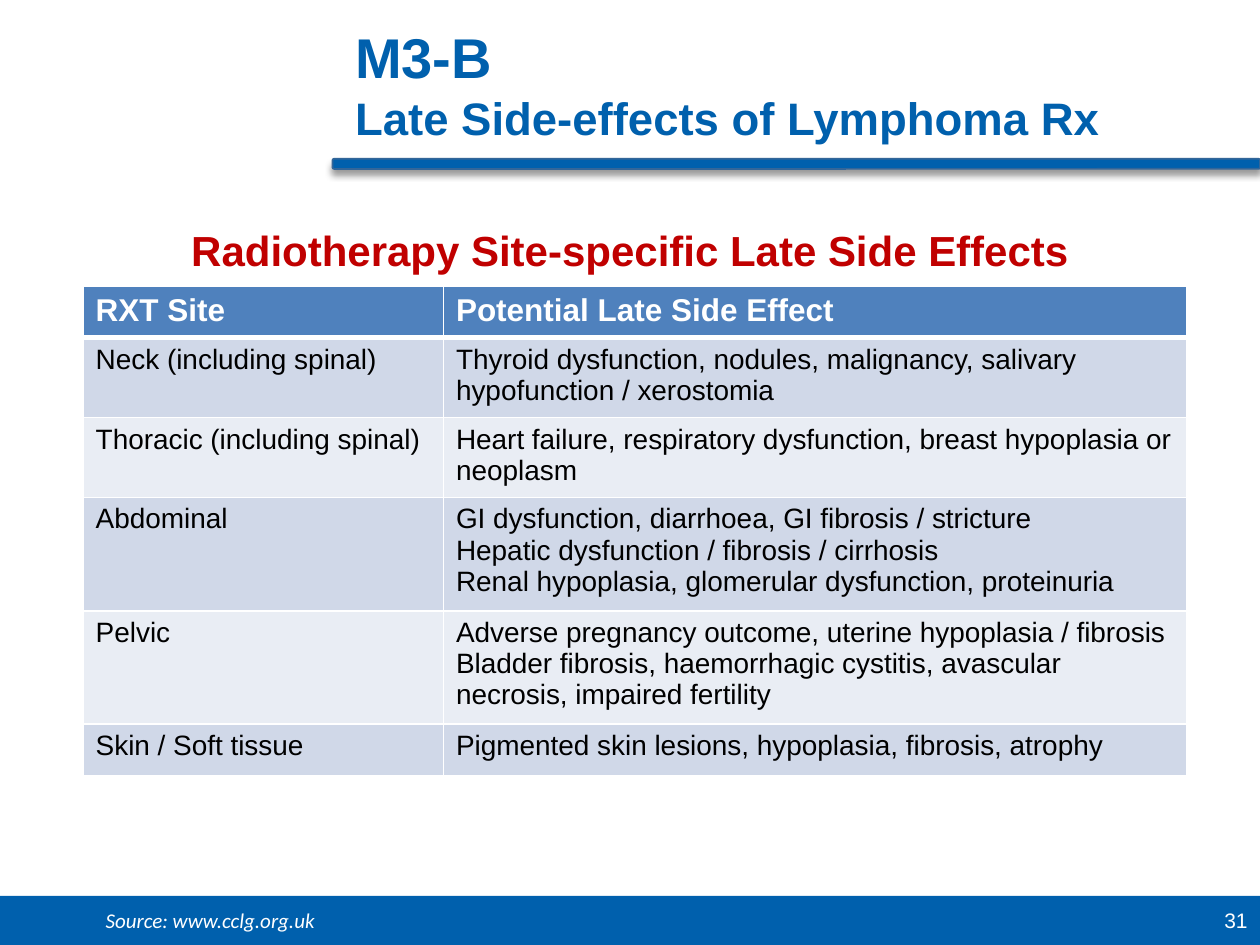
from lxml.etree import SubElement
from pptx import Presentation
from pptx.dml.color import RGBColor
from pptx.enum.shapes import MSO_SHAPE
from pptx.enum.text import MSO_ANCHOR, PP_ALIGN
from pptx.oxml import parse_xml
from pptx.oxml.ns import nsdecls, qn
from pptx.util import Pt

COLORS = {"blue": "0060AD", "edge": "336699", "red": "C00000", "white": "FFFFFF", "black": "000000",
          "header": "4F81BD", "odd": "D0D8E8", "even": "E9EDF4"}
SITE_EFFECTS = [
    ("RXT Site", "Potential Late Side Effect"),
    ("Neck (including spinal)",
     "Thyroid dysfunction, nodules, malignancy, salivary hypofunction / xerostomia"),
    ("Thoracic (including spinal)",
     "Heart failure, respiratory dysfunction, breast hypoplasia or neoplasm"),
    ("Abdominal",
     "GI dysfunction, diarrhoea, GI fibrosis / stricture\n"
     "Hepatic dysfunction / fibrosis / cirrhosis\n"
     "Renal hypoplasia, glomerular dysfunction, proteinuria"),
    ("Pelvic",
     "Adverse pregnancy outcome, uterine hypoplasia / fibrosis\n"
     "Bladder fibrosis, haemorrhagic cystitis, avascular necrosis, impaired fertility"),
    ("Skin / Soft tissue", "Pigmented skin lesions, hypoplasia, fibrosis, atrophy"),
]


def color(name):
    """Return the named colour."""
    return RGBColor.from_string(COLORS[name])


def style(font, size, name, bold=False, italic=False, face="Arial"):
    """Set the face, size, colour and weight of a font."""
    font.name, font.size, font.bold, font.italic = face, Pt(size), bold, italic
    font.color.rgb = color(name)


def add_text(page, box, text="", align=PP_ALIGN.LEFT, anchor=MSO_ANCHOR.MIDDLE):
    """Add a wrapping text box and return its first paragraph."""
    frame = page.shapes.add_textbox(*map(Pt, box)).text_frame
    frame.word_wrap, frame.vertical_anchor = True, anchor
    para = frame.paragraphs[0]
    para.text, para.alignment = text, align
    return para


def add_bar(page, kind, box):
    """Add a plain blue bar."""
    bar = page.shapes.add_shape(kind, *map(Pt, box))
    bar.shadow.inherit = False
    bar.fill.solid()
    bar.fill.fore_color.rgb = color("blue")
    bar.line.fill.background()
    return bar


def add_heading(page, left, top, width):
    """Add the two-line title and the shadowed rule beneath it."""
    para = add_text(page, (left + 5.8, top, width, 71.3))
    for number, (text, size) in enumerate([("M3-B", 32), ("Late Side-effects of Lymphoma Rx", 26)]):
        if number:
            para.add_line_break()
        span = para.add_run()
        span.text = text
        style(span.font, size, "blue", bold=True)
    rule = add_bar(page, MSO_SHAPE.ROUNDED_RECTANGLE, (left, top + 78.5, width, 5.8))
    rule.line.color.rgb, rule.line.width = color("edge"), Pt(1)
    effects = rule._element.spPr.find(qn("a:effectLst"))
    effects.append(parse_xml(
        f'<a:outerShdw {nsdecls("a")} blurRad="{Pt(4)}" dist="{Pt(3)}" dir="5400000" rotWithShape="0">'
        f'<a:srgbClr val="{COLORS["black"]}"><a:alpha val="40000"/></a:srgbClr></a:outerShdw>'))


def add_borders(cell, bottom):
    """Draw white borders round a cell, with the given bottom width."""
    properties = cell._tc.get_or_add_tcPr()
    for number, (side, width) in enumerate([("L", 1), ("R", 1), ("T", 1), ("B", bottom)]):
        line = parse_xml(f'<a:ln{side} {nsdecls("a")} w="{Pt(width)}"/>')
        fill = SubElement(line, qn("a:solidFill"))
        SubElement(fill, qn("a:srgbClr"), val=COLORS["white"])
        properties.insert(number, line)


def add_effects_table(page, left, top, widths, row_height):
    """Add the table of late side effects by treatment site."""
    count = len(SITE_EFFECTS)
    table = page.shapes.add_table(count, len(widths), Pt(left), Pt(top),
                                  Pt(sum(widths)), Pt(row_height * count)).table
    for column, width in zip(table.columns, widths):
        column.width = Pt(width)
    for row, texts in enumerate(SITE_EFFECTS):
        header = row == 0
        band = "header" if header else ("even", "odd")[row % 2]
        for column, text in enumerate(texts):
            cell = table.cell(row, column)
            cell.text = text
            cell.fill.solid()
            cell.fill.fore_color.rgb = color(band)
            add_borders(cell, 3 if header else 1)
            for para in cell.text_frame.paragraphs:
                style(para.font, 18 if header else 16, "white" if header else "black", bold=header)


def add_footer(page, left, top, width, height):
    """Add the footer band with the source and the page number."""
    add_bar(page, MSO_SHAPE.RECTANGLE, (left, top, width, height))
    number = add_text(page, (left + width - 168, top, 168, height), "31", PP_ALIGN.RIGHT)
    style(number.font, 12, "white")
    source = add_text(page, (left + 53.3, top + 2.9, 537, 21.6), "Source: www.cclg.org.uk",
                      anchor=MSO_ANCHOR.TOP)
    style(source.font, 12, "white", italic=True, face="Calibri")


def main():
    """Build the slide and save it."""
    deck = Presentation()
    deck.slide_width, deck.slide_height = Pt(720), Pt(540)
    page = deck.slides.add_slide(deck.slide_layouts[6])
    add_footer(page, 0, 512, 720, 28)
    add_heading(page, 190, 12.2, 530)
    subtitle = add_text(page, (36, 123.8, 648, 37.4), "Radiotherapy Site-specific Late Side Effects",
                        PP_ALIGN.CENTER)
    style(subtitle.font, 24, "red", bold=True)
    add_effects_table(page, 47.5, 163.8, (205.9, 424.8), 29.2)
    deck.save("out.pptx")


if __name__ == "__main__":
    main()
